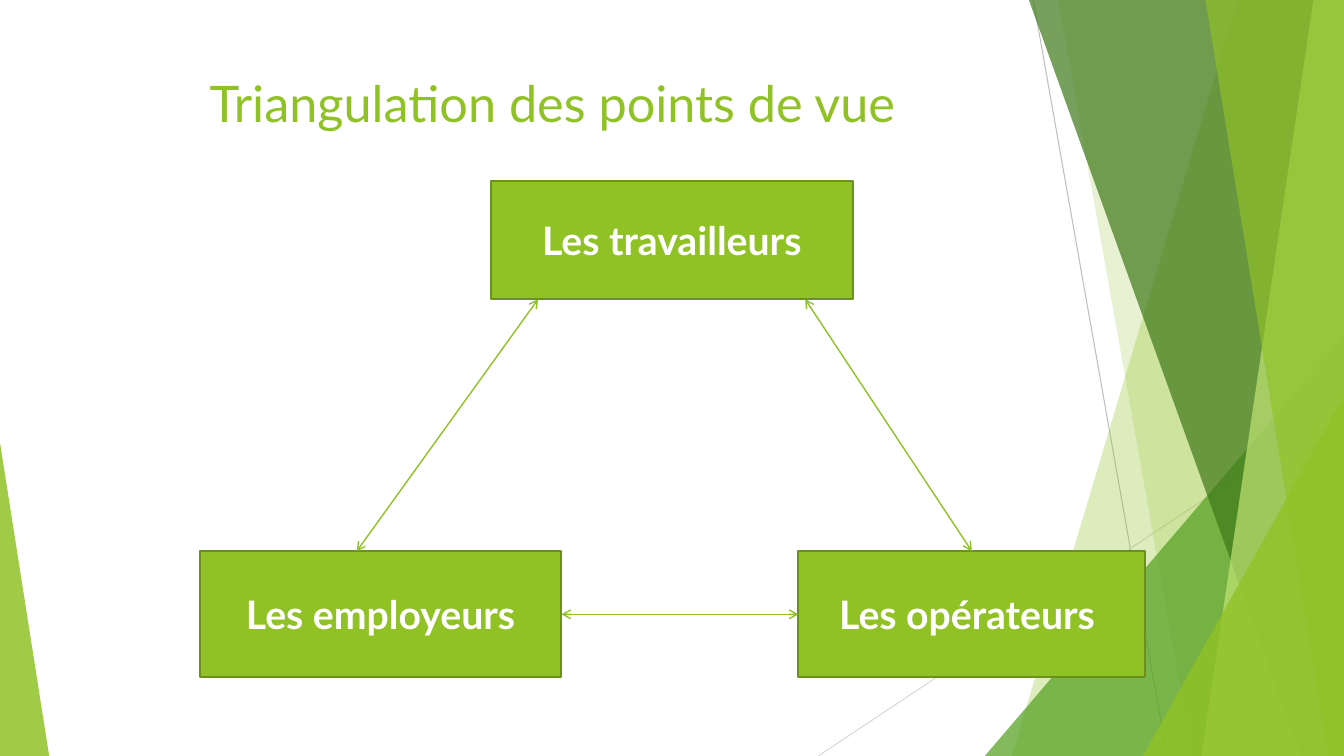
from lxml.etree import SubElement
from pptx import Presentation
from pptx.dml.color import RGBColor
from pptx.enum.shapes import MSO_CONNECTOR, MSO_SHAPE
from pptx.enum.text import MSO_ANCHOR, MSO_AUTO_SIZE, PP_ALIGN
from pptx.oxml.ns import qn
from pptx.util import Cm, Pt

# Content
TITLE = "Triangulation des points de vue"
FONT = "Lato"
COLORS = {
    "lime": "90C226", "green": "54A021", "forest": "3F7819", "pale": "C0E474",
    "border": "6B901C", "grey": "BFBFBF", "light grey": "D9D9D9", "white": "FFFFFF",
}
WIDTH, HEIGHT = 33.87, 19.05

# Lengths in cm: label, left, top, width, height
ACTORS = [
    ("Les travailleurs", 12.37, 4.57, 9.12, 2.97),
    ("Les employeurs", 5.03, 13.89, 9.12, 3.18),
    ("Les opérateurs ", 20.12, 13.89, 8.74, 3.18),
]
# Start and end points
ARROWS = [
    ((13.56, 7.54), (8.99, 13.89)),
    ((20.29, 7.54), (24.49, 13.89)),
    ((14.15, 15.48), (20.12, 15.48)),
]
THIN_LINES = [
    ((26.04, 0), (29.41, HEIGHT), "grey"),
    ((WIDTH, 10.24), (20.62, HEIGHT), "light grey"),
]
# Bands run to the right edge: ("band", top x, bottom x, color, opacity)
# Wedges stand on the bottom edge: ("wedge", left, right, top, apex, color, opacity)
DECOR = [
    ("band", 31.19, 25.5, "lime", 30),
    ("band", 26.67, 30.05, "lime", 20),
    ("wedge", 24.82, WIDTH, 8.46, 1, "green", 72),
    ("band", 25.93, 32.79, "forest", 70),
    ("band", 33.1, 30.28, "pale", 70),
    ("band", 30.38, 33.48, "lime", 65),
    ("wedge", 28.8, WIDTH, 9.98, 1, "lime", 80),
    ("wedge", 0, 1.24, 11.15, 0, "lime", 85),
]


def rgb(name):
    return RGBColor.from_string(COLORS[name])


def paint(shape, color, opacity=100):
    shape.shadow.inherit = False
    shape.line.fill.background()
    shape.fill.solid()
    shape.fill.fore_color.rgb = rgb(color)
    if opacity < 100:
        tint = shape.fill._xPr.find(qn("a:solidFill"))[0]
        SubElement(tint, qn("a:alpha"), val=str(opacity * 1000))


def add_band(top_x, bottom_x, color, opacity):
    builder = slide.shapes.build_freeform(Cm(top_x), 0)
    corners = [(WIDTH, 0), (WIDTH, HEIGHT), (bottom_x, HEIGHT)]
    builder.add_line_segments([(Cm(x), Cm(y)) for x, y in corners], close=True)
    paint(builder.convert_to_shape(), color, opacity)


def add_wedge(left, right, top, apex, color, opacity):
    wedge = slide.shapes.add_shape(
        MSO_SHAPE.ISOSCELES_TRIANGLE,
        Cm(left), Cm(top), Cm(right - left), Cm(HEIGHT - top))
    wedge.adjustments[0] = apex
    paint(wedge, color, opacity)


def add_line(start, end, color, weight, arrows=False):
    line = slide.shapes.add_connector(
        MSO_CONNECTOR.STRAIGHT, *(Cm(value) for value in start + end))
    line.line.color.rgb = rgb(color)
    line.line.width = Pt(weight)
    if arrows:
        for tag in ("a:headEnd", "a:tailEnd"):
            SubElement(line.line._get_or_add_ln(), qn(tag), type="arrow")
    SubElement(line._element.spPr, qn("a:effectLst"))


def write(shape, text, size, color, align, anchor, bold):
    frame = shape.text_frame
    frame.text = text
    frame.word_wrap = True
    frame.auto_size = MSO_AUTO_SIZE.NONE
    frame.vertical_anchor = anchor
    para = frame.paragraphs[0]
    para.alignment = align
    font = para.runs[0].font
    font.name, font.size, font.bold = FONT, Pt(size), bold
    font.color.rgb = rgb(color)


deck = Presentation()
deck.slide_width, deck.slide_height = Cm(WIDTH), Cm(HEIGHT)
slide = deck.slides.add_slide(deck.slide_layouts[5])

# Background decoration
for start, end, color in THIN_LINES:
    add_line(start, end, color, 0.75)
for kind, *details in DECOR:
    if kind == "band":
        add_band(*details)
    else:
        add_wedge(*details)

# Title
title = slide.shapes.title
title.left, title.top, title.width, title.height = Cm(5.03), Cm(1.7), Cm(18.54), Cm(3.66)
write(title, TITLE, 36, "lime", PP_ALIGN.LEFT, MSO_ANCHOR.TOP, False)

# Actors and the arrows between them
for label, *place in ACTORS:
    box = slide.shapes.add_shape(MSO_SHAPE.RECTANGLE, *(Cm(value) for value in place))
    paint(box, "lime")
    box.line.color.rgb = rgb("border")
    box.line.width = Pt(1.5)
    write(box, label, 28, "white", PP_ALIGN.CENTER, MSO_ANCHOR.MIDDLE, True)
for start, end in ARROWS:
    add_line(start, end, "lime", 1, arrows=True)

deck.save("out.pptx")
